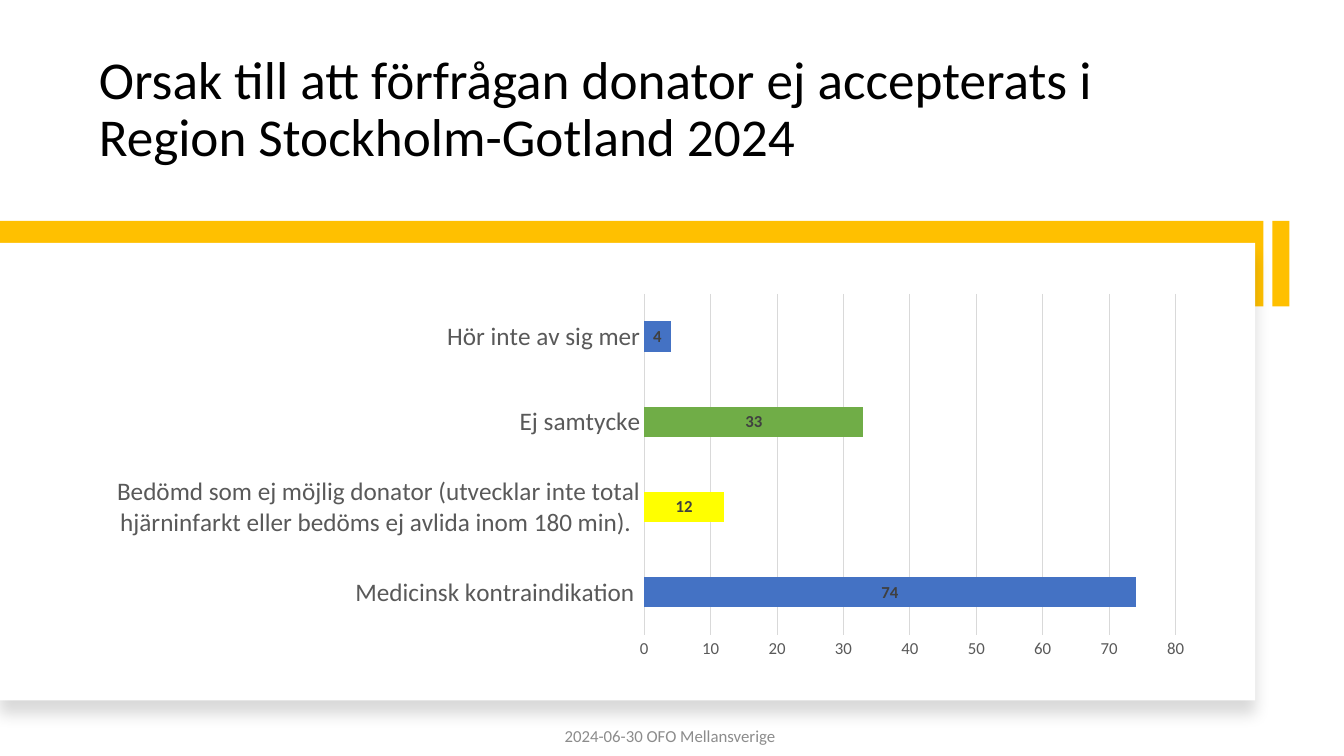
from lxml.etree import SubElement
from pptx import Presentation
from pptx.chart.data import CategoryChartData
from pptx.dml.color import RGBColor
from pptx.enum.chart import XL_CHART_TYPE, XL_LABEL_POSITION, XL_TICK_MARK
from pptx.enum.shapes import MSO_SHAPE
from pptx.enum.text import MSO_ANCHOR, MSO_AUTO_SIZE, PP_ALIGN
from pptx.oxml import parse_xml
from pptx.oxml.ns import nsdecls, qn
from pptx.util import Inches, Pt

# Content
TITLE = "Orsak till att förfrågan donator ej accepterats i Region Stockholm-Gotland 2024"
FOOTER = "2024-06-30 OFO Mellansverige "
REASONS = [
    ("Medicinsk kontraindikation ", 74, "blue"),
    ("Bedömd som ej möjlig donator (utvecklar inte total hjärninfarkt "
     "eller bedöms ej avlida inom 180 min). ", 12, "yellow"),
    ("Ej samtycke", 33, "green"),
    ("Hör inte av sig mer", 4, "blue"),
]


class Theme:
    font = "Calibri"
    title, category, small = 38, 18, 12
    colors = {
        "black": "000000", "white": "FFFFFF", "gold": "FFC000", "blue": "4472C4",
        "yellow": "FFFF00", "green": "70AD47", "grid": "D9D9D9", "axis": "595959",
        "value": "404040", "footer": "8C8C8C",
    }


# Layout in inches
SLIDE_W, SLIDE_H = 13.33, 7.5
BAND_TOP, BAND_H, BAND_W = 2.19, 0.85, 12.53
TAB_W, TAB_GAP = 0.17, 0.09
CARD = (0, 2.41, 12.45, 4.54)
TITLE_BOX = (0.88, 0.42, 10.1, 1.3)
FOOTER_BOX = ((SLIDE_W - 4.5) / 2, 7.1, 4.5, 0.4)
CHART_BOX = (0.9, 2.84, 10.98, 3.76)
PLOT_SHARE = {"x": 0.5, "y": 0.02, "w": 0.48, "h": 0.9}


def color(name):
    return RGBColor.from_string(Theme.colors[name])


def style_font(font, size, name, bold=False):
    font.name, font.size, font.bold = Theme.font, Pt(size), bold
    font.color.rgb = color(name)


def write(s, text, size, name, align=PP_ALIGN.LEFT, anchor=MSO_ANCHOR.MIDDLE,
          spacing=1.0, after=0):
    tf = s.text_frame
    tf.word_wrap, tf.auto_size, tf.vertical_anchor = True, MSO_AUTO_SIZE.NONE, anchor
    p = tf.paragraphs[0]
    p.alignment, p.line_spacing, p.space_after = align, spacing, Pt(after)
    r = p.add_run()
    r.text = text
    style_font(r.font, size, name)


def add_rect(slide, box, name):
    s = slide.shapes.add_shape(MSO_SHAPE.RECTANGLE, *map(Inches, box))
    s.shadow.inherit = False
    s.fill.solid()
    s.fill.fore_color.rgb = color(name)
    s.line.fill.background()
    return s


def add_soft_shadow(s):
    effects = s._element.spPr.find(qn("a:effectLst"))
    effects.append(parse_xml(
        f'<a:outerShdw {nsdecls("a")} blurRad="{Pt(11)}" dist="{Pt(10)}" dir="5400000" '
        'algn="t" rotWithShape="0"><a:srgbClr val="000000"><a:alpha val="15000"/>'
        '</a:srgbClr></a:outerShdw>'))


def place_plot(chart):
    plot_area = chart._chartSpace.chart.plotArea
    layout = plot_area.find(qn("c:layout"))
    if layout is None:
        layout = plot_area.makeelement(qn("c:layout"))
        plot_area.insert(0, layout)
    manual = SubElement(layout, qn("c:manualLayout"))
    SubElement(manual, qn("c:layoutTarget"), val="inner")
    for side in "xy":
        SubElement(manual, qn(f"c:{side}Mode"), val="edge")
    for side, share in PLOT_SHARE.items():
        SubElement(manual, qn(f"c:{side}"), val=str(share))


def add_reason_chart(slide):
    data = CategoryChartData()
    data.categories = [reason for reason, _, _ in REASONS]
    data.add_series("Series 1", [count for _, count, _ in REASONS])
    chart = slide.shapes.add_chart(
        XL_CHART_TYPE.BAR_CLUSTERED, *map(Inches, CHART_BOX), data).chart
    chart.has_legend = chart.has_title = False
    style_font(chart.font, 10, "black")
    place_plot(chart)

    # Bars and their values
    plot = chart.plots[0]
    plot.gap_width, plot.vary_by_categories = 182, False
    series = plot.series[0]
    series.format.fill.solid()
    series.format.fill.fore_color.rgb = color("blue")
    for i, (_, _, name) in enumerate(REASONS):
        if name != "blue":
            fill = series.points[i].format.fill
            fill.solid()
            fill.fore_color.rgb = color(name)
    labels = series.data_labels
    labels.show_value, labels.position = True, XL_LABEL_POSITION.CENTER
    style_font(labels.font, Theme.small, "value", bold=True)

    # Axes
    cat, val = chart.category_axis, chart.value_axis
    for axis, size in ((cat, Theme.category), (val, Theme.small)):
        axis.major_tick_mark = axis.minor_tick_mark = XL_TICK_MARK.NONE
        style_font(axis.tick_labels.font, size, "axis")
    val.minimum_scale, val.maximum_scale, val.major_unit = 0, 80, 10
    val.format.line.fill.background()
    val.has_major_gridlines = True
    for line in (cat.format.line, val.major_gridlines.format.line):
        line.color.rgb, line.width = color("grid"), Pt(0.75)


def main():
    prs = Presentation()
    prs.slide_width, prs.slide_height = Inches(SLIDE_W), Inches(SLIDE_H)
    slide = prs.slides.add_slide(prs.slide_layouts[5])

    # Title
    title = slide.shapes.title
    title.left, title.top, title.width, title.height = map(Inches, TITLE_BOX)
    write(title, TITLE, Theme.title, "black", anchor=MSO_ANCHOR.BOTTOM, spacing=0.9)

    # Gold band with its tab, and the white card over it
    add_rect(slide, (BAND_W + TAB_GAP, BAND_TOP, TAB_W, BAND_H), "gold")
    add_rect(slide, (0, BAND_TOP, BAND_W, BAND_H), "gold")
    add_soft_shadow(add_rect(slide, CARD, "white"))

    # Footer and chart
    footer = slide.shapes.add_textbox(*map(Inches, FOOTER_BOX))
    write(footer, FOOTER, Theme.small, "footer", align=PP_ALIGN.CENTER, after=6)
    add_reason_chart(slide)

    prs.save("out.pptx")


if __name__ == "__main__":
    main()
